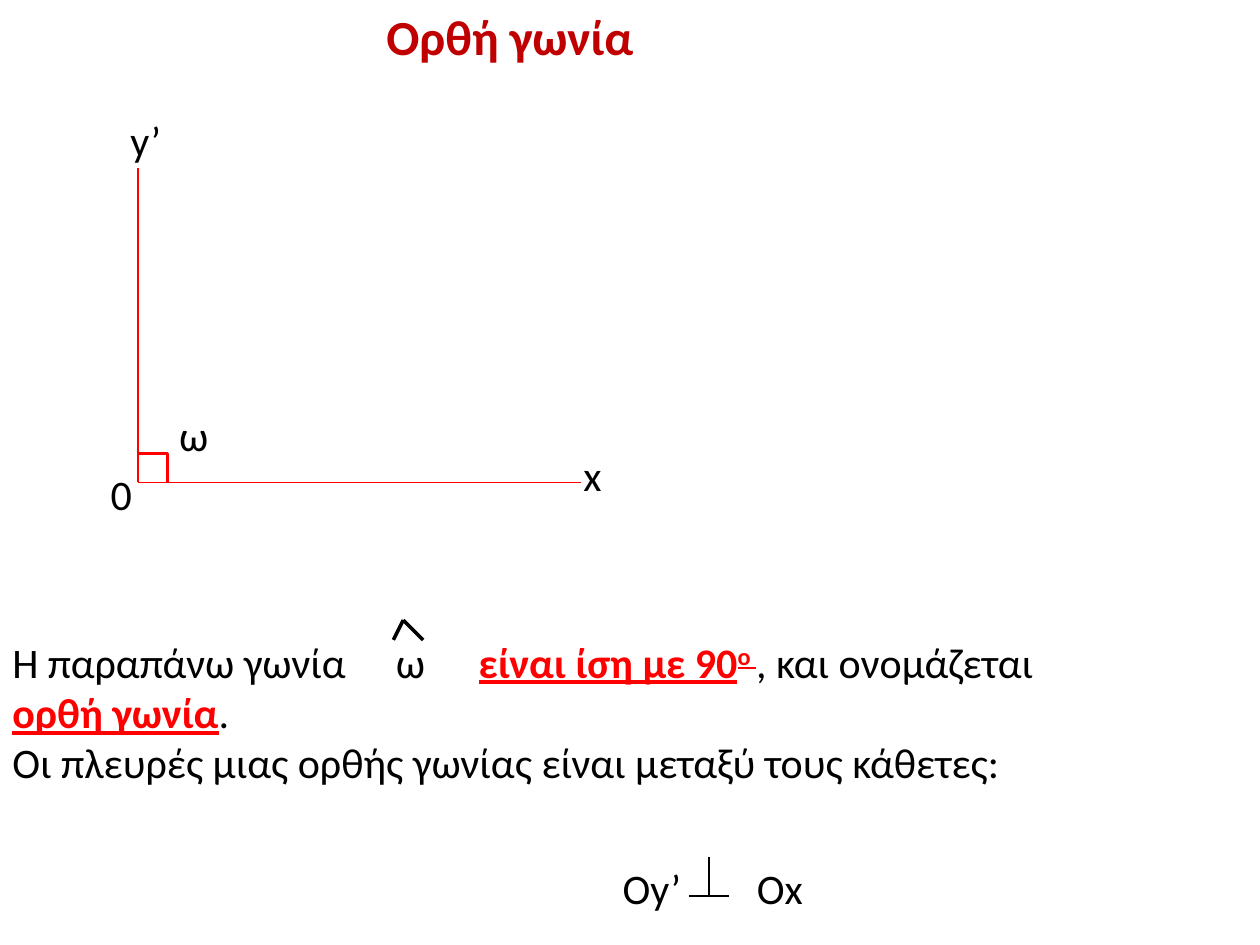
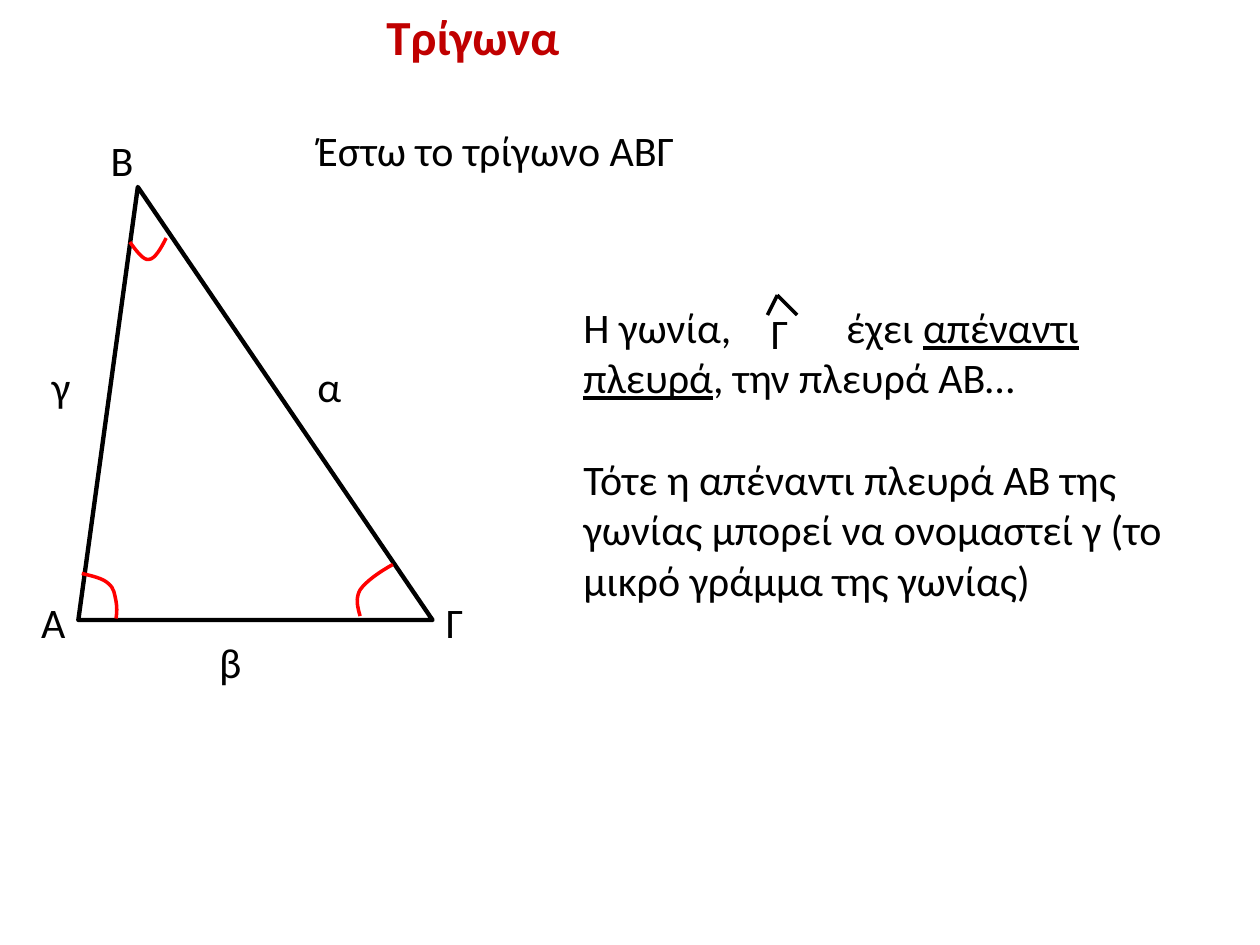
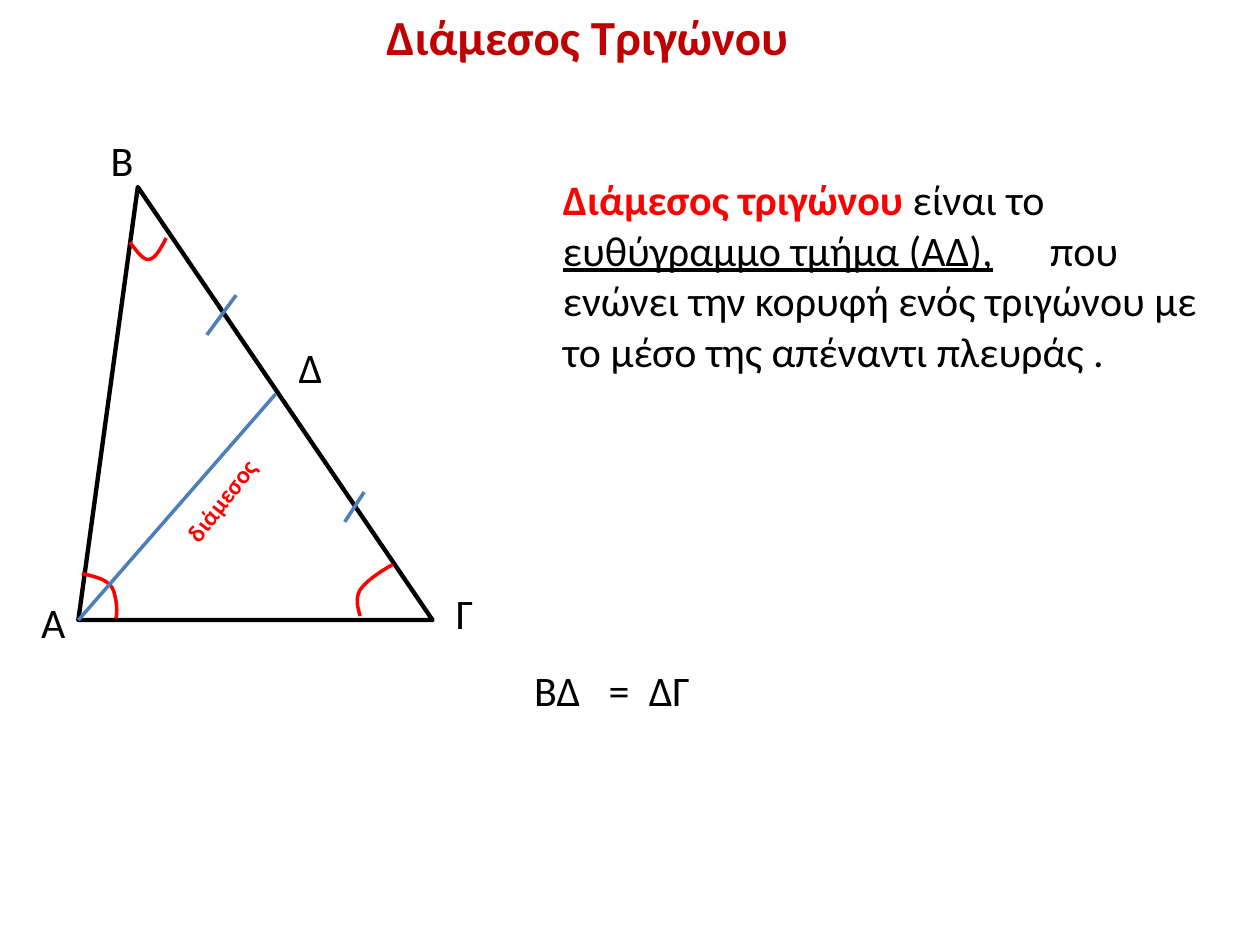
from lxml import etree
from pptx import Presentation
from pptx.dml.color import RGBColor
from pptx.enum import shapes, text
from pptx.oxml.ns import qn
from pptx.util import Cm, Pt

BLACK = RGBColor(0x00, 0x00, 0x00)
RED = RGBColor(0xFF, 0x00, 0x00)
DARK_RED = RGBColor(0xC0, 0x00, 0x00)
BLUE = RGBColor(0x4B, 0x7E, 0xBC)
FONT = "Calibri"
LINE_HEIGHT = Pt(29.3)
KEY = {"color": RED, "bold": True}
KEY_LINE = {**KEY, "underline": True}

# Triangle vertices, and arcs as a start followed by triples of Bézier points (cm)
A, B, C = (1.58, 12.5), (2.78, 3.77), (8.72, 12.5)
ANGLE_ARCS = [
    [(2.62, 4.88), (2.74, 5.05), (2.9, 5.26), (3, 5.23),
     (3.12, 5.23), (3.25, 5), (3.35, 4.8)],
    [(1.65, 11.56), (1.85, 11.61), (2.08, 11.66), (2.18, 11.76),
     (2.31, 11.86), (2.31, 11.99), (2.34, 12.12),
     (2.36, 12.24), (2.36, 12.34), (2.34, 12.47)],
    [(7.26, 12.42), (7.21, 12.24), (7.16, 12.07), (7.26, 11.89),
     (7.39, 11.71), (7.65, 11.53), (7.92, 11.38)],
]


def add_span(para, words, size=24, color=BLACK, bold=False, underline=False, raised=False):
    span = para.add_run()
    span.text = words
    font = span.font
    font.name, font.size, font.bold, font.underline = FONT, Pt(size), bold, underline
    font.color.rgb = color
    if raised:
        span._r.get_or_add_rPr().set("baseline", "30000")


def add_tabs(para, stops):
    tab_list = etree.SubElement(para._p.get_or_add_pPr(), qn("a:tabLst"))
    for stop in stops:
        etree.SubElement(tab_list, qn("a:tab"), pos=str(Cm(stop)), algn="l")


def add_text(page, left, top, width, height, paragraphs, tabs=(), gap=0):
    """Add a box; each paragraph is a list of (words, style) pairs."""
    box = page.shapes.add_textbox(Cm(left), Cm(top), Cm(width), Cm(height))
    frame = box.text_frame
    frame.word_wrap = True
    frame.auto_size = text.MSO_AUTO_SIZE.SHAPE_TO_FIT_TEXT
    for number, spans in enumerate(paragraphs):
        para = frame.add_paragraph() if number else frame.paragraphs[0]
        if tabs:
            add_tabs(para, tabs)
        if number:
            para.space_before = gap
        for words, style in spans:
            add_span(para, words, **style)
    return box


def add_label(page, words, left, top, width=1.4):
    add_text(page, left, top, width, 1.27, [[(words, {})]])


def add_line(holder, start, end, color, weight, kind=shapes.MSO_CONNECTOR.STRAIGHT):
    line = holder.shapes.add_connector(kind, *(Cm(n) for n in (*start, *end)))
    line.line.color.rgb = color
    line.line.width = Pt(weight)
    etree.SubElement(line._element.spPr, qn("a:effectLst"))
    return line


def add_right_angle(page, start, end):
    """Draw an elbow that runs across and then straight down."""
    mark = add_line(page, start, end, RED, 2, shapes.MSO_CONNECTOR.ELBOW)
    guides = mark._element.spPr.find(qn("a:prstGeom")).find(qn("a:avLst"))
    etree.SubElement(guides, qn("a:gd"), name="adj1", fmla="val 100000")


def add_hat(page, x, y):
    hat = page.shapes.add_group_shape()
    for reach in (-0.2, 0.4):
        add_line(hat, (x, y), (x + reach, y + 0.4), BLACK, 2)


def add_perpendicular_sign(page, x, y):
    sign = page.shapes.add_group_shape()
    add_line(sign, (x - 0.4, y), (x + 0.4, y), BLACK, 1.25)
    add_line(sign, (x, y - 0.79), (x, y), BLACK, 1.25)


def style_outline(shape, color, weight):
    shape.shadow.inherit = False
    shape.fill.background()
    shape.line.color.rgb = color
    shape.line.width = Pt(weight)


def add_arc(page, points):
    start, *others = [(Cm(x), Cm(y)) for x, y in points]
    builder = page.shapes.build_freeform(*start)
    builder.add_line_segments(others, close=False)
    arc = builder.convert_to_shape()
    style_outline(arc, RED, 2)
    outline = arc._element.xpath(".//a:path")[0]
    segments = outline.findall(qn("a:lnTo"))
    for first in range(0, len(segments), 3):
        curve = etree.SubElement(outline, qn("a:cubicBezTo"))
        for segment in segments[first:first + 3]:
            curve.append(segment[0])
            outline.remove(segment)


def add_triangle(page):
    """Draw the triangle with its angle arcs and the labels of A and B."""
    width, height = C[0] - A[0], A[1] - B[1]
    triangle = page.shapes.add_shape(shapes.MSO_SHAPE.ISOSCELES_TRIANGLE,
                                     Cm(A[0]), Cm(B[1]), Cm(width), Cm(height))
    triangle.adjustments[0] = (B[0] - A[0]) / width
    style_outline(triangle, BLACK, 2.5)
    for points in ANGLE_ARCS:
        add_arc(page, points)
    add_label(page, "Α", 0.58, 11.91)
    add_label(page, "Β", 1.98, 2.59)


def add_page(deck, title):
    page = deck.slides.add_slide(deck.slide_layouts[6])
    add_text(page, 7.54, 0, 12.7, 1.45,
             [[(title, {"size": 28, "color": DARK_RED, "bold": True})]])
    return page


def build_right_angle(deck):
    page = add_page(deck, "Ορθή γωνία")
    origin = (2.78, 9.72)
    add_line(page, origin, (2.78, 3.38), RED, 0.75)
    add_line(page, origin, (11.71, 9.72), RED, 0.75)
    add_right_angle(page, (2.78, 9.14), (3.38, 9.72))
    for words, left, top in [("0", 1.98, 9.32), ("y’", 2.38, 2.18), ("x", 11.51, 8.94),
                             ("ω", 3.36, 8.13), ("ω", 7.73, 12.7)]:
        add_label(page, words, left, top)
    add_hat(page, 8.13, 12.5)
    add_text(page, 0, 12.7, 22.63, 3.33, [
        [("Η παραπάνω γωνία\t", {}), ("είναι ίση με 90", KEY_LINE),
         ("ο ", {**KEY_LINE, "raised": True}), (", και ονομάζεται ", {}),
         ("ορθή γωνία", KEY_LINE), (".", {})],
        [("Οι πλευρές μιας ορθής γωνίας είναι μεταξύ τους κάθετες:", {})],
    ], tabs=[9.4])
    add_label(page, "Οy’", 12.3, 17.27, 1.75)
    add_perpendicular_sign(page, 14.29, 18.06)
    add_label(page, "Οx", 15.01, 17.27, 1.75)


def build_triangle(deck):
    page = add_page(deck, "Τρίγωνα")
    add_triangle(page)
    add_text(page, 6.15, 2.39, 12.7, 1.27, [[("Έστω το τρίγωνο ΑΒΓ", {})]])
    for words, left, top in [("Γ", 8.74, 11.91), ("Γ", 15.29, 6.07), ("β", 4.17, 12.7),
                             ("α", 6.15, 7.14), ("γ", 0.79, 7.14)]:
        add_label(page, words, left, top)
    add_hat(page, 15.67, 5.95)
    add_text(page, 11.51, 5.95, 13.28, 6.4, [
        [("Η γωνία,\tέχει ", {}), ("απέναντι πλευρά", {"underline": True}),
         (", την πλευρά ΑΒ…", {})],
        [("Τότε η απέναντι πλευρά ΑΒ της γωνίας μπορεί να ονομαστεί γ "
          "(το μικρό γράμμα της γωνίας)", {})],
    ], tabs=[5.3], gap=LINE_HEIGHT)


def build_median(deck):
    page = add_page(deck, "Διάμεσος Τριγώνου")
    add_triangle(page)
    add_label(page, "Γ", 8.94, 11.71)
    add_label(page, "Δ", 5.77, 6.76)
    for start, end in [(A, (5.56, 7.94)), ((4.76, 5.95), (4.17, 6.75)),
                       ((7.34, 9.92), (6.95, 10.52))]:
        add_line(page, start, end, BLUE, 2)
    name = add_text(page, 3.07, 9.3, 3.35, 0.86, [[("διάμεσος", {**KEY, "size": 14})]])
    name.rotation = 308
    add_text(page, 11.1, 3.38, 13.69, 4.37, [
        [("Διάμεσος τριγώνου ", KEY), ("είναι το ", {}),
         ("ευθύγραμμο τμήμα (ΑΔ),\t", {"underline": True}),
         ("που ενώνει την κορυφή ενός τριγώνου με το μέσο της απέναντι πλευράς .", {})],
    ], tabs=[9.82])
    add_text(page, 10.52, 13.28, 5.16, 1.27, [[("ΒΔ\t=\tΔΓ", {})]], tabs=[1.5, 2.31])


def main():
    deck = Presentation()
    deck.slide_width, deck.slide_height = Cm(25.4), Cm(19.05)
    build_right_angle(deck)
    build_triangle(deck)
    build_median(deck)
    deck.save("out.pptx")


if __name__ == "__main__":
    main()
